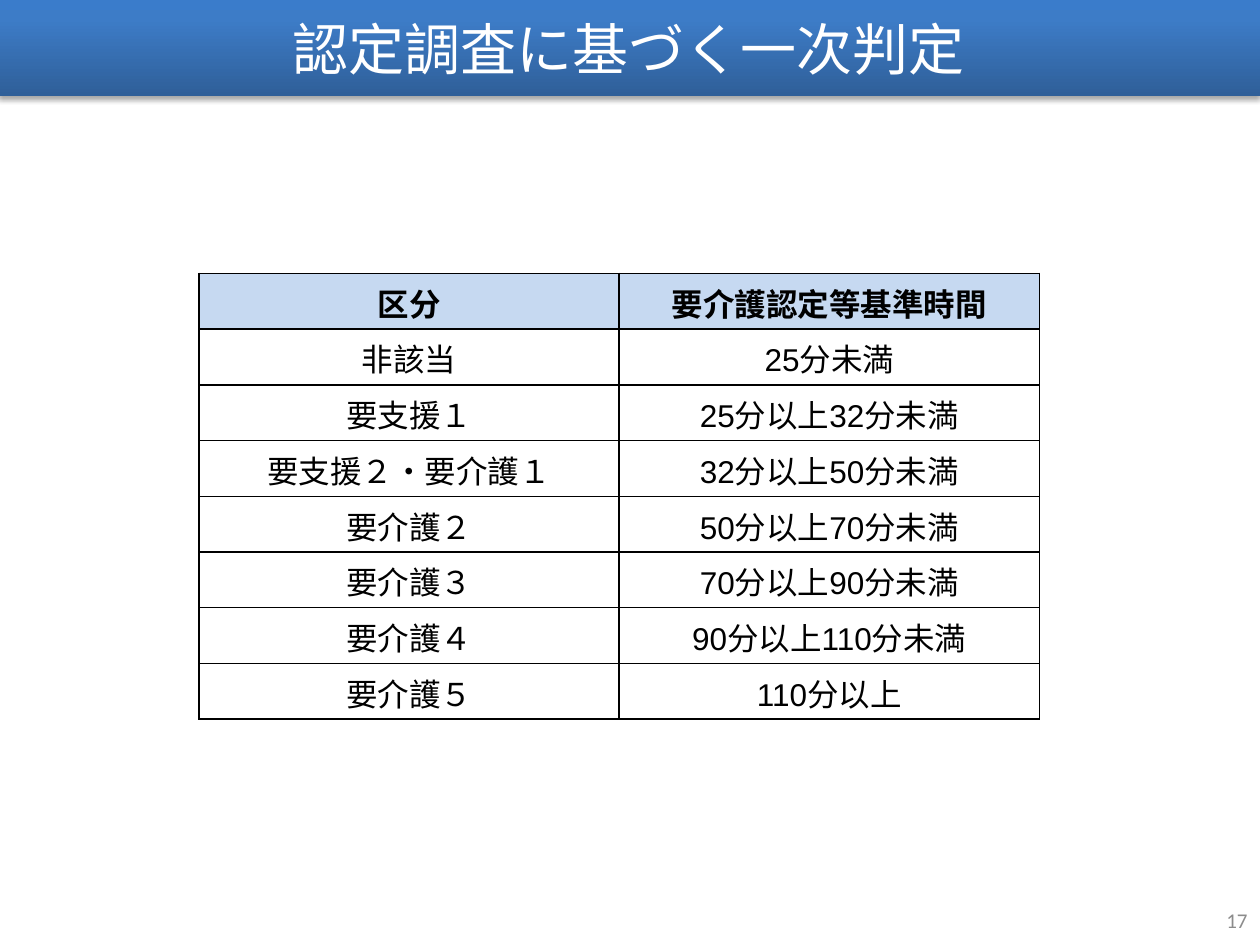
from dataclasses import dataclass

from lxml import etree
from pptx import Presentation
from pptx.dml.color import RGBColor
from pptx.enum.shapes import MSO_SHAPE
from pptx.enum.text import MSO_ANCHOR, PP_ALIGN
from pptx.oxml import parse_xml
from pptx.oxml.ns import nsdecls, qn
from pptx.util import Inches, Pt


@dataclass(frozen=True)
class Theme:
    heading_font: str = "Calibri"
    table_font: str = "Arial"
    title_size: int = 32
    table_size: int = 18
    number_size: int = 12
    white: str = "FFFFFF"
    black: str = "000000"
    gray: str = "8C8C8C"
    header_fill: str = "C6D9F1"
    banner_stops: tuple = ((0, "2F5F99"), (80, "3D7CC7"), (100, "3A7CCB"))


THEME = Theme()

CARE_LEVELS = [
    ("区分", "要介護認定等基準時間"),
    ("非該当", "25分未満"),
    ("要支援１", "25分以上32分未満"),
    ("要支援２・要介護１", "32分以上50分未満"),
    ("要介護２", "50分以上70分未満"),
    ("要介護３", "70分以上90分未満"),
    ("要介護４", "90分以上110分未満"),
    ("要介護５", "110分以上"),
]


def write(frame, text, font, size, color, align=PP_ALIGN.CENTER, bold=False):
    frame.text = text
    para = frame.paragraphs[0]
    para.alignment = align
    span = para.runs[0]
    span.font.name = font
    span.font.size = Pt(size)
    span.font.bold = bold
    span.font.color.rgb = RGBColor.from_string(color)


def paint_banner(shape):
    """Give the shape its upward gradient and a soft shadow below."""
    stops = "".join(
        f'<a:gs pos="{position * 1000}"><a:srgbClr val="{color}"/></a:gs>'
        for position, color in THEME.banner_stops
    )
    gradient = parse_xml(
        f'<a:gradFill {nsdecls("a")} rotWithShape="1"><a:gsLst>{stops}</a:gsLst>'
        '<a:lin ang="16200000" scaled="0"/></a:gradFill>'
    )
    shadow = parse_xml(
        f'<a:effectLst {nsdecls("a")}><a:outerShdw blurRad="{Pt(3.1)}" '
        f'dist="{Pt(1.8)}" dir="5400000" rotWithShape="0">'
        f'<a:srgbClr val="{THEME.black}"><a:alpha val="35000"/></a:srgbClr>'
        "</a:outerShdw></a:effectLst>"
    )
    shape.line.fill.background()
    properties = shape.element.spPr
    properties.find(qn("a:prstGeom")).addnext(gradient)
    properties.append(shadow)


def add_banner(page, box, title):
    banner = page.shapes.add_shape(MSO_SHAPE.RECTANGLE, *box)
    paint_banner(banner)
    banner.text_frame.vertical_anchor = MSO_ANCHOR.MIDDLE
    write(banner.text_frame, title, THEME.heading_font, THEME.title_size, THEME.white)


def add_borders(cell):
    properties = cell._tc.get_or_add_tcPr()
    for index, side in enumerate(("lnL", "lnR", "lnT", "lnB")):
        line = etree.Element(qn(f"a:{side}"), w=str(Pt(1)))
        fill = etree.SubElement(line, qn("a:solidFill"))
        etree.SubElement(fill, qn("a:srgbClr"), val=THEME.black)
        properties.insert(index, line)


def add_level_table(page, box, rows):
    left, top, width, height = box
    table = page.shapes.add_table(len(rows), len(rows[0]), *box).table
    table.horz_banding = False
    table.first_row = False
    for column in table.columns:
        column.width = width // len(rows[0])
    for row in table.rows:
        row.height = height // len(rows)
    for row_index, row in enumerate(rows):
        is_header = row_index == 0
        for column_index, text in enumerate(row):
            cell = table.cell(row_index, column_index)
            if is_header:
                cell.fill.solid()
                cell.fill.fore_color.rgb = RGBColor.from_string(THEME.header_fill)
            else:
                cell.fill.background()
            add_borders(cell)
            write(cell.text_frame, text, THEME.table_font, THEME.table_size,
                  THEME.black, bold=is_header)


def add_page_number(page, box, number):
    frame = page.shapes.add_textbox(*box).text_frame
    frame.word_wrap = True
    frame.vertical_anchor = MSO_ANCHOR.MIDDLE
    write(frame, number, THEME.heading_font, THEME.number_size, THEME.gray,
          PP_ALIGN.RIGHT)


def inches(*lengths):
    return tuple(Inches(length) for length in lengths)


def main():
    deck = Presentation()
    deck.slide_width, deck.slide_height = inches(10, 7.5)
    page = deck.slides.add_slide(deck.slide_layouts[6])
    add_page_number(page, inches(7.67, 7.1, 2.33, 0.4), "17")
    add_banner(page, inches(-0.02, 0, 10.02, 0.76), "認定調査に基づく一次判定")
    add_level_table(page, inches(1.58, 2.17, 6.67, 3.54), CARE_LEVELS)
    deck.save("out.pptx")


if __name__ == "__main__":
    main()
